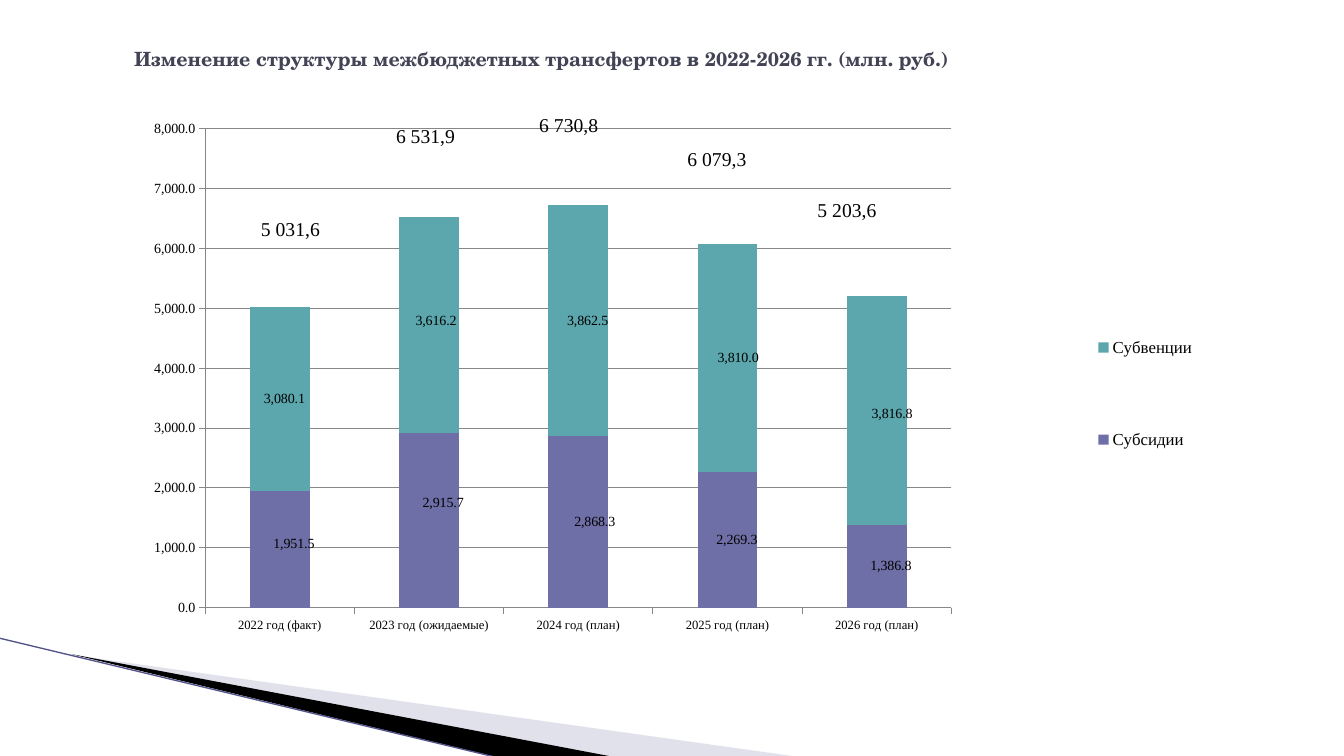
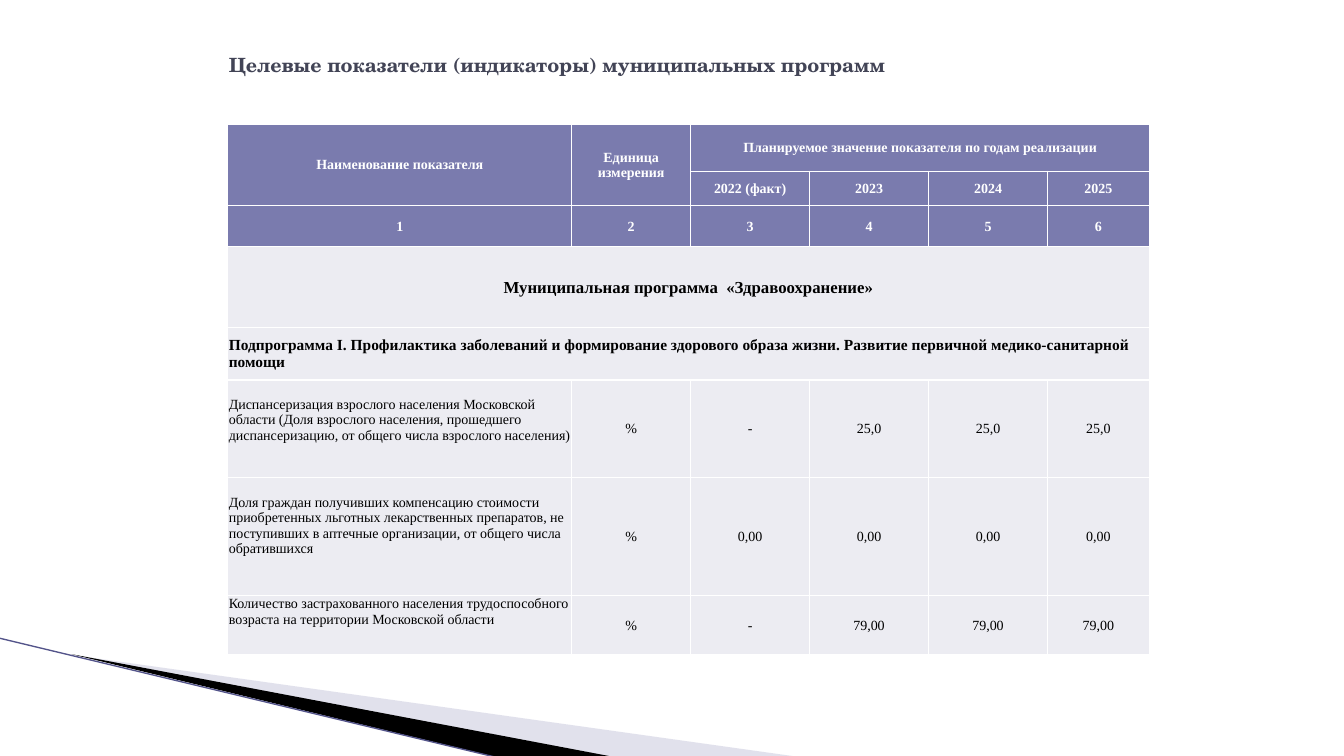
from dataclasses import dataclass

from lxml.etree import SubElement
from pptx import Presentation
from pptx.chart.data import CategoryChartData
from pptx.dml.color import RGBColor
from pptx.enum.chart import XL_CHART_TYPE as ChartType
from pptx.enum.chart import XL_LEGEND_POSITION as LegendPosition
from pptx.enum.chart import XL_TICK_MARK as TickMark
from pptx.enum.shapes import MSO_CONNECTOR as Connector
from pptx.enum.text import MSO_ANCHOR as Anchor
from pptx.enum.text import MSO_AUTO_SIZE as AutoSize
from pptx.enum.text import PP_ALIGN as Align
from pptx.oxml import parse_xml
from pptx.oxml.ns import nsdecls, qn
from pptx.util import Inches, Pt


@dataclass(frozen=True)
class Theme:
    title_font: str = "TeX Gyre Schola"
    body_font: str = "Times New Roman"
    title: str = "424456"
    text: str = "000000"
    white: str = "FFFFFF"
    wing: str = "B6B6D1"
    edge: str = "53548A"
    header: str = "7A7BAE"
    body: str = "ECECF2"
    grid: str = "878787"
    title_size: int = 14
    total_size: int = 14
    program_size: int = 12
    legend_size: int = 12
    subprogram_size: int = 11
    small_size: int = 10
    category_size: int = 9


THEME = Theme()

# Content: chart slide
CHART_TITLE = "Изменение структуры межбюджетных трансфертов в 2022-2026 гг. (млн. руб.)"
YEARS = ["2022 год (факт)", "2023 год (ожидаемые)", "2024 год (план)",
         "2025 год (план)", "2026 год (план)"]
# name, colour, values, label shifts as percent of the chart's size
SERIES = [
    ("Субсидии", "6E6FA6", (1951.5, 2915.7, 2868.3, 2269.3, 1386.8),
     ((1.2, -1.1), (1.2, -3.2), (1.4, 0), (0.8, 0), (1.2, 0))),
    ("Субвенции", "5BA7AD", (3080.1, 3616.2, 3862.5, 3810, 3816.8),
     ((0.4, 0), (0.6, -0.7), (0.8, 0), (0.9, 0), (1.3, 0.6))),
]
TOTALS = [("5 031,6", 2.49, 2.1), ("6 531,9", 3.83, 1.18), ("6 730,8", 5.25, 1.07),
          ("6 079,3", 6.72, 1.41), ("5 203,6", 8.01, 1.91)]

# Content: table slide
TABLE_TITLE = "Целевые показатели (индикаторы) муниципальных программ"
HEADER_ROWS = [
    ("Наименование показателя", "Единица измерения",
     "Планируемое значение показателя по годам реализации"),
    ("", "", "2022 (факт)", "2023", "2024", "2025"),
    ("1", "2", "3", "4", "5", "6"),
]
PROGRAM = "Муниципальная программа  «Здравоохранение»"
SUBPROGRAM = ("Подпрограмма I. Профилактика заболеваний и формирование здорового образа "
              "жизни. Развитие первичной медико-санитарной помощи")
INDICATORS = [
    ("Диспансеризация взрослого населения Московской области (Доля взрослого населения, "
     "прошедшего диспансеризацию, от общего числа взрослого населения)",
     "%", "-", "25,0", "25,0", "25,0"),
    ("Доля граждан получивших компенсацию стоимости приобретенных льготных лекарственных "
     "препаратов, не поступивших в аптечные организации, от общего числа обратившихся",
     "%", "0,00", "0,00", "0,00", "0,00"),
    ("Количество застрахованного населения трудоспособного возраста на территории "
     "Московской области", "%", "-", "79,00", "79,00", "79,00"),
]
NAME_TOP_MARGINS = (0.17, 0.17, 0.01)
COLUMN_WIDTHS = (3.41, 1.18, 1.18, 1.18, 1.18, 1.01)
ROW_HEIGHTS = (0.47, 0.34, 0.41, 0.8, 0.52, 0.97, 1.17, 0.59)
MERGES = [((0, 0), (1, 0)), ((0, 1), (1, 1)), ((0, 2), (0, 5)),
          ((3, 0), (3, 5)), ((4, 0), (4, 5))]

# Shared decoration: outline points, colour, opacity in percent
WINGS = [
    ([(0.73, 6.5), (7.93, 7.51), (6.08, 7.51)], THEME.wing, 40),
    ([(0.71, 6.49), (6.09, 7.51), (4.96, 7.52)], THEME.text, 100),
]
EDGE = (-0.01, 6.33, 4.95, 7.52)


def rgb(value):
    return RGBColor.from_string(value)


def style_font(font, size, color=THEME.text, bold=False, name=THEME.body_font):
    font.name, font.size, font.bold = name, Pt(size), bold
    font.color.rgb = rgb(color)


def decorate(layout, slide):
    """Draw the corner wings and hand them over to the shared layout."""
    parts = []
    for points, color, opacity in WINGS:
        corners = [(Inches(x), Inches(y)) for x, y in points]
        builder = slide.shapes.build_freeform(*corners[0])
        builder.add_line_segments(corners[1:], close=True)
        wing = builder.convert_to_shape()
        wing.shadow.inherit = False
        wing.fill.solid()
        wing.fill.fore_color.rgb = rgb(color)
        wing.line.fill.background()
        if opacity < 100:
            fill = wing.element.spPr.find(qn("a:solidFill"))
            SubElement(fill[0], qn("a:alpha"), val=str(opacity * 1000))
        parts.append(wing)
    edge = slide.shapes.add_connector(Connector.STRAIGHT, *map(Inches, EDGE))
    edge.line.color.rgb = rgb(THEME.edge)
    edge.line.width = Pt(0.95)
    SubElement(edge.element.spPr, qn("a:effectLst"))
    for shape in (*parts, edge):
        layout.shapes.element.append(shape.element)


def set_title(slide, text, box):
    title = slide.shapes.title
    title.left, title.top, title.width, title.height = map(Inches, box)
    frame = title.text_frame
    frame.text = text
    frame.word_wrap = True
    frame.auto_size = AutoSize.NONE
    frame.vertical_anchor = Anchor.MIDDLE
    paragraph = frame.paragraphs[0]
    paragraph.alignment = Align.LEFT
    style_font(paragraph.font, THEME.title_size, THEME.title, True, THEME.title_font)


def set_layout(parent, index, inner=False, **shares):
    """Place a chart part by shares of the chart's size."""
    for old in parent.findall(qn("c:layout")):
        parent.remove(old)
    layout = parse_xml(f"<c:layout {nsdecls('c')}><c:manualLayout/></c:layout>")
    values = {"layoutTarget": "inner"} if inner else {}
    if "w" in shares:
        values.update(xMode="edge", yMode="edge")
    values.update(shares)
    for tag, value in values.items():
        SubElement(layout[0], qn(f"c:{tag}"), val=str(value))
    parent.insert(index, layout)


def label_series(series, shifts):
    labels = series.data_labels
    labels.show_value = True
    labels.number_format = "#,##0.0"
    labels.number_format_is_linked = False
    style_font(labels.font, THEME.small_size)
    for index in range(len(shifts)):
        style_font(series.points[index].data_label.font, THEME.small_size)
    point_labels = series._element.findall(f"{qn('c:dLbls')}/{qn('c:dLbl')}")
    for point_label, (x, y) in zip(point_labels, shifts):
        set_layout(point_label, 1, x=x / 100, y=y / 100)


def add_transfer_chart(slide):
    data = CategoryChartData(number_format="#,##0.0")
    data.categories = YEARS
    for name, _, values, _ in SERIES:
        data.add_series(name, values)
    box = map(Inches, (0.92, 1.07, 11.73, 5.35))
    chart = slide.shapes.add_chart(ChartType.COLUMN_STACKED, *box, data).chart
    chart.has_title = False
    style_font(chart.font, THEME.small_size)

    plot = chart.plots[0]
    plot.gap_width, plot.overlap, plot.vary_by_categories = 150, 100, False
    for series, (_, color, _, shifts) in zip(plot.series, SERIES):
        series.format.fill.solid()
        series.format.fill.fore_color.rgb = rgb(color)
        label_series(series, shifts)

    # Axes and grid
    value_axis, category_axis = chart.value_axis, chart.category_axis
    value_axis.minimum_scale, value_axis.maximum_scale = 0, 8000
    value_axis.major_unit = 1000
    value_axis.tick_labels.number_format = "#,##0.0"
    value_axis.tick_labels.number_format_is_linked = False
    value_axis.has_major_gridlines = True
    value_axis.major_gridlines.format.line.color.rgb = rgb(THEME.grid)
    for axis, size in ((value_axis, THEME.small_size),
                       (category_axis, THEME.category_size)):
        axis.major_tick_mark = TickMark.OUTSIDE
        axis.format.line.color.rgb = rgb(THEME.grid)
        style_font(axis.tick_labels.font, size)

    # Legend and plot area
    chart.has_legend = True
    chart.legend.position = LegendPosition.RIGHT
    chart.legend.include_in_layout = False
    style_font(chart.legend.font, THEME.legend_size)
    set_layout(chart.legend._element, 1, x=0.83, y=0.29, w=0.12, h=0.48)
    plot_area = chart._chartSpace.find(f".//{qn('c:plotArea')}")
    set_layout(plot_area, 0, inner=True, x=0.095, y=0.039, w=0.631, h=0.888)


def add_total(slide, text, left, top):
    box = slide.shapes.add_textbox(*map(Inches, (left, top, 0.87, 0.34)))
    box.text_frame.text = text
    box.text_frame.word_wrap = True
    style_font(box.text_frame.paragraphs[0].font, THEME.total_size)


def set_borders(cell):
    properties = cell._tc.get_or_add_tcPr()
    for side in ("lnL", "lnR", "lnT", "lnB"):
        line = SubElement(properties, qn(f"a:{side}"), w=str(Pt(1)))
        fill = SubElement(line, qn("a:solidFill"))
        SubElement(fill, qn("a:srgbClr"), val=THEME.white)


def set_cell(cell, text, size, color, bold, centred=True, top=0.01):
    cell.text = text
    cell.margin_left = cell.margin_right = Inches(0.01)
    cell.margin_top, cell.margin_bottom = Inches(top), 0
    cell.vertical_anchor = Anchor.MIDDLE
    paragraph = cell.text_frame.paragraphs[0]
    paragraph.alignment = Align.CENTER if centred else Align.LEFT
    style_font(paragraph.font, size, color, bold)


def add_indicator_table(slide):
    rows, columns = len(ROW_HEIGHTS), len(COLUMN_WIDTHS)
    box = (2.26, 1.23, sum(COLUMN_WIDTHS), sum(ROW_HEIGHTS))
    table = slide.shapes.add_table(rows, columns, *map(Inches, box)).table
    table.horz_banding = False
    for column, width in zip(table.columns, COLUMN_WIDTHS):
        column.width = Inches(width)
    for row, height in zip(table.rows, ROW_HEIGHTS):
        row.height = Inches(height)
    for first, last in MERGES:
        table.cell(*first).merge(table.cell(*last))

    # Borders and fills
    for row_index in range(rows):
        for cell in table.rows[row_index].cells:
            set_borders(cell)
            cell.fill.solid()
            is_header = row_index < len(HEADER_ROWS)
            cell.fill.fore_color.rgb = rgb(THEME.header if is_header else THEME.body)

    # Text
    for row_index, texts in enumerate(HEADER_ROWS):
        for column_index, text in enumerate(texts):
            if text:
                set_cell(table.cell(row_index, column_index), text,
                         THEME.small_size, THEME.white, True)
    set_cell(table.cell(3, 0), PROGRAM, THEME.program_size, THEME.text, True)
    set_cell(table.cell(4, 0), SUBPROGRAM, THEME.subprogram_size, THEME.text, True, False)
    for row_index, (texts, top) in enumerate(zip(INDICATORS, NAME_TOP_MARGINS), start=5):
        for column_index, text in enumerate(texts):
            is_name = column_index == 0
            cell = table.cell(row_index, column_index)
            set_cell(cell, text, THEME.small_size, THEME.text, False,
                     not is_name, top if is_name else 0.01)
            if is_name:
                cell.vertical_anchor = Anchor.TOP


def main():
    presentation = Presentation()
    presentation.slide_width, presentation.slide_height = Inches(13.33), Inches(7.5)
    layout = presentation.slide_layouts[5]

    chart_slide = presentation.slides.add_slide(layout)
    decorate(layout, chart_slide)
    add_transfer_chart(chart_slide)
    set_title(chart_slide, CHART_TITLE, (1.23, 0.29, 9.37, 0.58))
    for total in TOTALS:
        add_total(chart_slide, *total)

    table_slide = presentation.slides.add_slide(layout)
    set_title(table_slide, TABLE_TITLE, (2.17, 0.3, 9, 0.69))
    add_indicator_table(table_slide)

    presentation.save("out.pptx")


if __name__ == "__main__":
    main()
